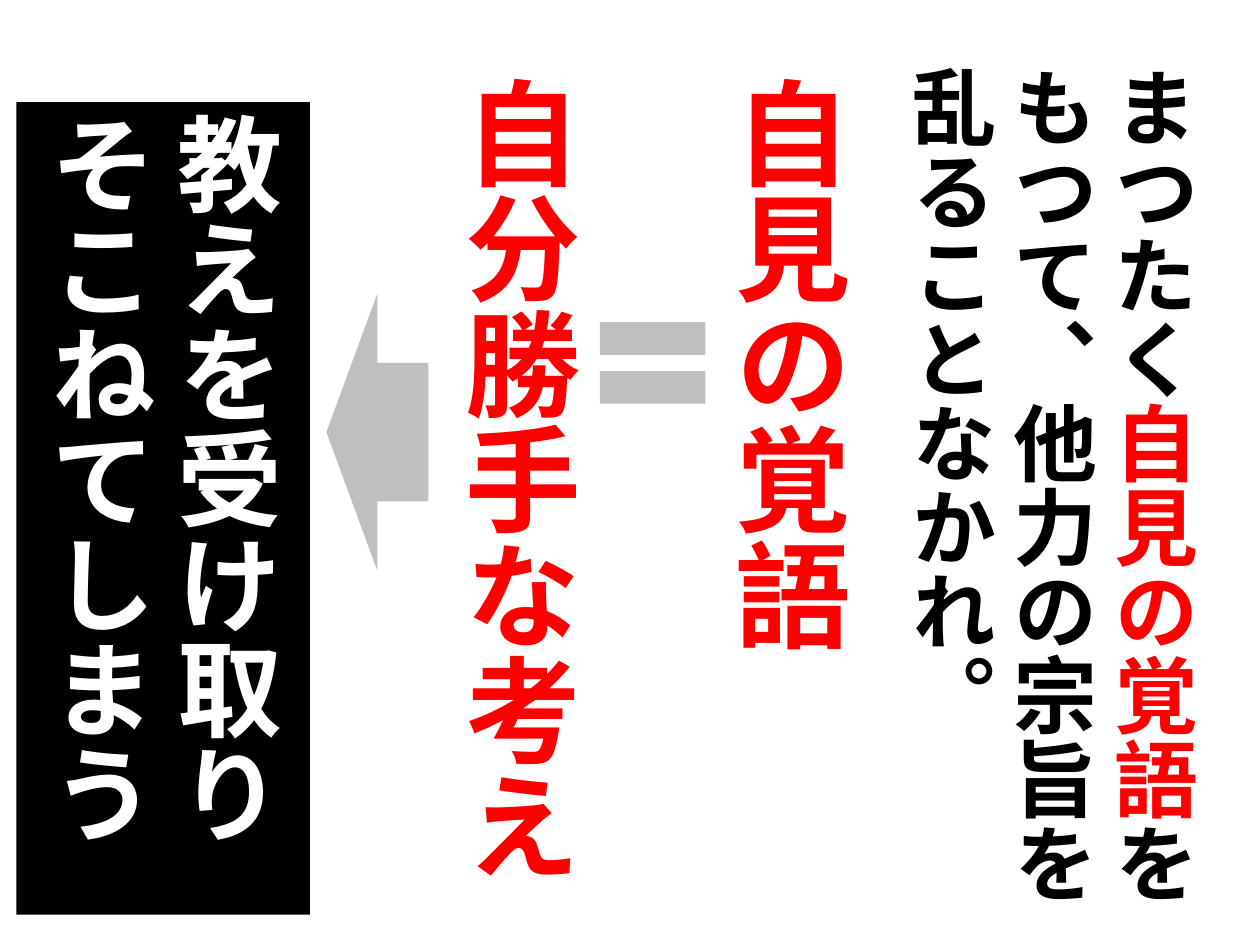
from pptx import Presentation
from pptx.dml.color import RGBColor
from pptx.enum.shapes import MSO_SHAPE as Shape
from pptx.enum.text import MSO_ANCHOR as Anchor, PP_ALIGN as Align
from pptx.util import Inches, Pt

BLACK, WHITE, RED, GREY = "000000", "FFFFFF", "FF0000", "BFBFBF"

deck = Presentation()
deck.slide_width, deck.slide_height = Inches(10), Inches(7.5)
COLUMN, ROW = deck.slide_width / 100, deck.slide_height / 100
page = deck.slides.add_slide(deck.slide_layouts[6])


def place(left, top, width, height):
    """Turn percentages of the slide into a position and size."""
    return (round(left * COLUMN), round(top * ROW),
            round(width * COLUMN), round(height * ROW))


def write_vertical(box, *spans, size, anchor=Anchor.MIDDLE, inset=None):
    """Fill a box with (text, colour) spans set in vertical columns."""
    frame = box.text_frame
    frame.word_wrap = True
    frame.vertical_anchor = anchor
    box.element.txBody.bodyPr.set("vert", "eaVert")
    if inset is not None:
        frame.margin_left = frame.margin_right = inset
        frame.margin_top = frame.margin_bottom = inset
    para = frame.paragraphs[0]
    para.alignment = Align.LEFT
    for text, colour in spans:
        span = para.add_run()
        span.text = text
        span.font.name, span.font.size, span.font.bold = "Calibri", Pt(size), True
        span.font.color.rgb = RGBColor.from_string(colour)


# Quotation, with its key phrase in red
quotation = page.shapes.add_textbox(*place(68.1, 5.6, 27.9, 91.6))
write_vertical(quotation, ("まつたく", BLACK), ("自見の覚語", RED),
               ("をもつて、他力の宗旨を乱ることなかれ。", BLACK),
               size=48, anchor=Anchor.TOP)

# The phrase and its meaning
for left, height, text in [(57.5, 73.73, "自見の覚語"),
                           (36.1, 92.8, "自分勝手な考え")]:
    term = page.shapes.add_textbox(*place(left, 6.67, 10.2, height))
    write_vertical(term, (text, RED), size=66)

# Equals sign, result panel and arrow
shapes = []
for kind, area, colour in [
    (Shape.MATH_EQUAL, (46.1, 31.07, 11.4, 14.67), GREY),
    (Shape.RECTANGLE, (1.3, 10.8, 23.3, 86), BLACK),
    (Shape.LEFT_ARROW, (25.9, 31.07, 8.1, 29.33), GREY),
]:
    shape = page.shapes.add_shape(kind, *place(*area))
    shape.shadow.inherit = False
    shape.fill.solid()
    shape.fill.fore_color.rgb = RGBColor.from_string(colour)
    shape.line.fill.background()
    shapes.append(shape)

equals, result, arrow = shapes
write_vertical(result, ("教えを受け取りそこねてしまう", WHITE),
               size=60, inset=Inches(0.08))

deck.save("out.pptx")
